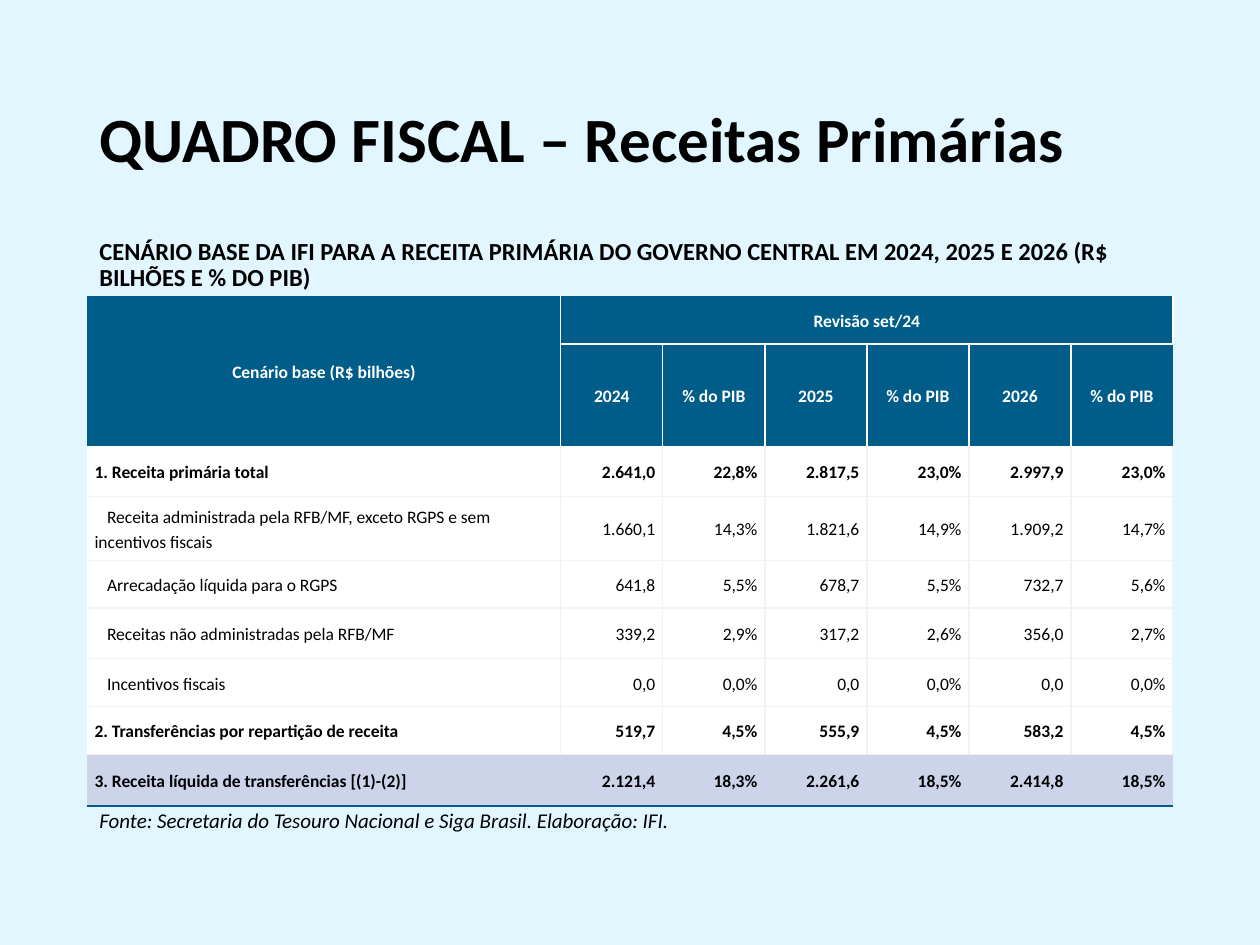
from lxml import etree
from pptx import Presentation
from pptx.dml.color import RGBColor
from pptx.enum.text import MSO_ANCHOR, MSO_AUTO_SIZE, PP_ALIGN
from pptx.oxml.ns import qn
from pptx.util import Inches, Pt

LEFT, CENTER, RIGHT = PP_ALIGN.LEFT, PP_ALIGN.CENTER, PP_ALIGN.RIGHT
TOP, MIDDLE = MSO_ANCHOR.TOP, MSO_ANCHOR.MIDDLE
NO_FIT = MSO_AUTO_SIZE.NONE

SKY = RGBColor(0xE2, 0xF6, 0xFF)
NAVY = RGBColor(0x00, 0x5D, 0x89)
LILAC = RGBColor(0xCD, 0xD4, 0xE9)
GRID = RGBColor(0xF2, 0xF2, 0xF2)
WHITE = RGBColor(0xFF, 0xFF, 0xFF)
BLACK = RGBColor(0x00, 0x00, 0x00)

LEFT_EDGE, WIDTH = 0.69, 8.62
COL_WIDTHS = [3.76] + [0.81] * 6
ROW_HEIGHTS = [0.38, 0.81, 0.4, 0.4, 0.38, 0.4, 0.38, 0.38, 0.41]

# Header labels and revenue rows; indented items are the parts of the total
HEADERS = ["Cenário base (R$ bilhões)", "Revisão set/24"]
SUBHEADERS = ["2024", "% do PIB", "2025", "% do PIB", "2026", "% do PIB"]
REVENUES = [
    ("1. Receita primária total",
     "2.641,0 22,8% 2.817,5 23,0% 2.997,9 23,0%"),
    ("Receita administrada pela RFB/MF, exceto RGPS e sem incentivos fiscais",
     "1.660,1 14,3% 1.821,6 14,9% 1.909,2 14,7%"),
    ("Arrecadação líquida para o RGPS",
     "641,8 5,5% 678,7 5,5% 732,7 5,6%"),
    ("Receitas não administradas pela RFB/MF",
     "339,2 2,9% 317,2 2,6% 356,0 2,7%"),
    ("Incentivos fiscais",
     "0,0 0,0% 0,0 0,0% 0,0 0,0%"),
    ("2. Transferências por repartição de receita",
     "519,7 4,5% 555,9 4,5% 583,2 4,5%"),
    ("3. Receita líquida de transferências [(1)-(2)]",
     "2.121,4 18,3% 2.261,6 18,5% 2.414,8 18,5%"),
]


def write(tf, text, size=10, color=BLACK, bold=False, italic=False, align=LEFT,
          line=1.15, before=0, after=0, indent=0):
    p = tf.paragraphs[0]
    p.alignment, p.line_spacing = align, line
    p.space_before, p.space_after = Pt(before), Pt(after)
    if indent:
        p_pr = p._p.get_or_add_pPr()
        p_pr.set("marL", "0")
        p_pr.set("indent", str(Inches(indent)))
    r = p.add_run()
    r.text = text
    r.font.name, r.font.size, r.font.color.rgb = "Calibri", Pt(size), color
    r.font.bold, r.font.italic = bold, italic


def set_border(cell, side, color=None, width=1):
    ln = etree.SubElement(cell._tc.get_or_add_tcPr(), qn(f"a:ln{side}"),
                          w=str(Pt(width)))
    if color is None:
        etree.SubElement(ln, qn("a:noFill"))
    else:
        fill = etree.SubElement(ln, qn("a:solidFill"))
        etree.SubElement(fill, qn("a:srgbClr"), val=str(color))


class Deck:
    def __init__(self):
        self.prs = Presentation()
        self.prs.slide_width, self.prs.slide_height = Inches(10), Inches(7.5)
        self.s = None

    def add_slide(self):
        self.s = self.prs.slides.add_slide(self.prs.slide_layouts[5])
        fill = self.s.background.fill
        fill.solid()
        fill.fore_color.rgb = SKY

    def place(self, sp, top, height, anchor):
        sp.left, sp.top = Inches(LEFT_EDGE), Inches(top)
        sp.width, sp.height = Inches(WIDTH), Inches(height)
        tf = sp.text_frame
        tf.word_wrap, tf.auto_size, tf.vertical_anchor = True, NO_FIT, anchor
        return tf

    def title(self, text, top, height):
        tf = self.place(self.s.shapes.title, top, height, MIDDLE)
        write(tf, text, size=36, bold=True, line=0.9)

    def caption(self, text, top, height, **fmt):
        sp = self.s.shapes.add_textbox(0, 0, 0, 0)
        write(self.place(sp, top, height, TOP), text, line=0.9, before=10, **fmt)

    def cell(self, cell, fill, borders, text="", **fmt):
        cell.margin_left = cell.margin_right = Inches(0.06)
        cell.margin_top = cell.margin_bottom = Inches(0.06)
        cell.vertical_anchor = MIDDLE
        for side in "LRTB":
            set_border(cell, side, *borders.get(side, ()))
        cell.fill.solid()
        cell.fill.fore_color.rgb = fill
        if text:
            write(cell.text_frame, text, after=6, **fmt)

    def table(self, top):
        rows, cols = len(ROW_HEIGHTS), len(COL_WIDTHS)
        frame = self.s.shapes.add_table(
            rows, cols, Inches(LEFT_EDGE), Inches(top), Inches(WIDTH),
            Inches(sum(ROW_HEIGHTS)))
        tbl = frame.table
        tbl.horz_banding = tbl.first_row = False
        for col, width in zip(tbl.columns, COL_WIDTHS):
            col.width = Inches(width)
        for row, height in zip(tbl.rows, ROW_HEIGHTS):
            row.height = Inches(height)

        # Two header rows: one label spans down, the other spans across
        tbl.cell(0, 0).merge(tbl.cell(1, 0))
        tbl.cell(0, 1).merge(tbl.cell(0, cols - 1))
        header = [HEADERS + [""] * (cols - 2), [""] + SUBHEADERS]
        for i, labels in enumerate(header):
            for j, text in enumerate(labels):
                sides = ("R" if j < cols - 1 else "") + ("L" if j else "")
                if j:
                    sides += "T" if i else "B"
                self.cell(tbl.cell(i, j), NAVY, {k: (WHITE,) for k in sides},
                          text, color=WHITE, bold=True, align=CENTER)

        # Revenue rows: numbered ones are bold, the last one is the result
        for i, (label, values) in enumerate(REVENUES, start=len(header)):
            last, numbered = i == rows - 1, label[0].isdigit()
            for j, text in enumerate([label] + values.split()):
                borders = {"B": (NAVY, 1.5) if last else (GRID,)}
                if i > len(header):
                    borders["T"] = (GRID,)
                if not last:
                    borders["R"] = (GRID,)
                    if j:
                        borders["L"] = (GRID,)
                self.cell(tbl.cell(i, j), LILAC if last else WHITE, borders,
                          text, bold=numbered, align=RIGHT if j else LEFT,
                          indent=0 if j or numbered else 0.1)


def main():
    deck = Deck()
    deck.add_slide()
    deck.title("QUADRO FISCAL – Receitas Primárias", 0.4, 1.45)
    deck.table(2.35)
    deck.caption("CENÁRIO BASE DA IFI PARA A RECEITA PRIMÁRIA DO GOVERNO CENTRAL "
                 "EM 2024, 2025 E 2026 (R$ BILHÕES E % DO PIB)",
                 1.85, 0.5, size=14, bold=True)
    deck.caption("Fonte: Secretaria do Tesouro Nacional e Siga Brasil. "
                 "Elaboração: IFI.", 6.38, 0.42, size=12, italic=True)
    deck.prs.save("out.pptx")


if __name__ == "__main__":
    main()
